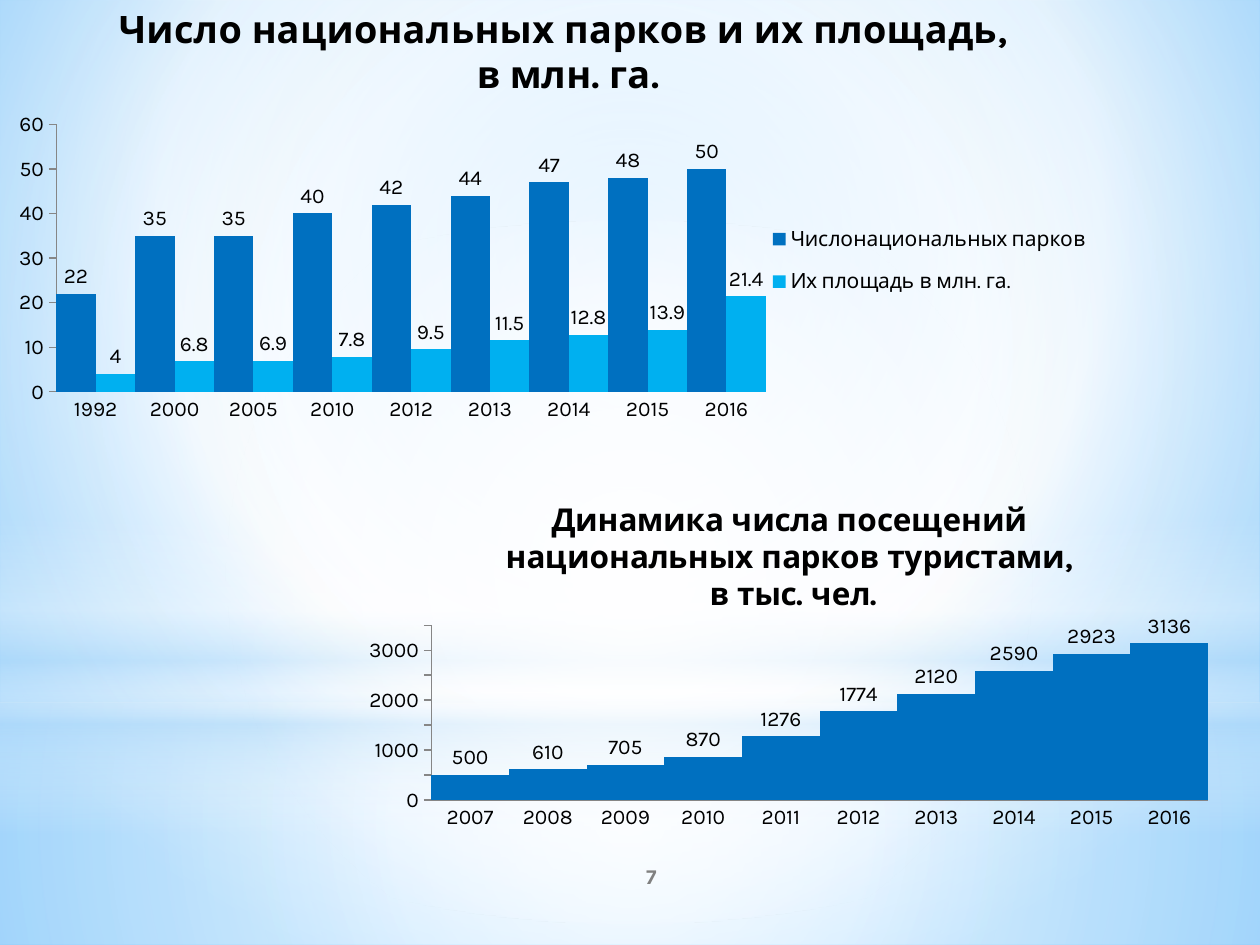
from dataclasses import dataclass

from lxml import etree
from pptx import Presentation
from pptx.chart.data import CategoryChartData
from pptx.dml.color import RGBColor
from pptx.enum.chart import XL_CHART_TYPE, XL_LABEL_POSITION, XL_LEGEND_POSITION, XL_TICK_MARK
from pptx.enum.shapes import MSO_SHAPE
from pptx.enum.text import MSO_ANCHOR, PP_ALIGN
from pptx.oxml import parse_xml
from pptx.oxml.ns import nsdecls, qn
from pptx.util import Cm, Pt

COLUMNS = XL_CHART_TYPE.COLUMN_CLUSTERED
OUTSIDE_END = XL_LABEL_POSITION.OUTSIDE_END
LEGEND_RIGHT = XL_LEGEND_POSITION.RIGHT
TICK_NONE, TICK_OUT = XL_TICK_MARK.NONE, XL_TICK_MARK.OUTSIDE
RECT, OVAL = MSO_SHAPE.RECTANGLE, MSO_SHAPE.OVAL
MIDDLE, CENTER = MSO_ANCHOR.MIDDLE, PP_ALIGN.CENTER


@dataclass(frozen=True)
class Theme:
    font: str = "Karla"
    text: str = "000000"
    muted: str = "808080"
    axis: str = "868686"
    blue: str = "0070C0"
    sky: str = "00B0F0"
    white: str = "FFFFFF"
    haze: str = "B4DCFA"
    label_size: float = 12


@dataclass(frozen=True)
class Gradient:
    stops: tuple                       # (position %, colour, opacity %)
    centre: tuple | None = (50, 50, 50, 50)  # None makes it run top to bottom


@dataclass(frozen=True)
class Glow:
    kind: int
    box: tuple
    gradient: Gradient


@dataclass(frozen=True)
class Series:
    name: str
    values: tuple
    color: str


@dataclass(frozen=True)
class ColumnChart:
    box: tuple
    title: tuple
    title_size: float
    years: tuple
    series: tuple
    top: int
    step: int
    plot: tuple                        # x, y, w, h as shares of the chart
    legend: tuple | None = None


T = Theme()

BACKDROP = Gradient(((0, "9ED5FF", 100), (60, T.white, 100), (100, "5BB9FF", 100)),
                    (20, 10, 20, 60))

GLOWS = (
    Glow(RECT, (0, 14.17, 25.4, 4.88),
         Gradient(((0, T.white, 91), (37, T.white, 76), (100, T.haze, 79)))),
    Glow(RECT, (0, 0, 25.4, 14.17),
         Gradient(((0, T.white, 89), (48, T.white, 62), (100, T.haze, 79)))),
    Glow(RECT, (0, 10.46, 25.4, 6.35),
         Gradient(((0, T.white, 0), (29, T.white, 30), (45, T.haze, 40),
                   (55, T.white, 26), (65, T.haze, 60), (100, T.white, 0)), None)),
    Glow(OVAL, (0, 4.45, 25.4, 14.17),
         Gradient(((0, T.white, 100), (56, T.white, 0)))),
)

CHARTS = (
    ColumnChart(
        box=(0, -0.28, 22.71, 8.99),
        title=("Число национальных парков и их площадь,", " в млн. га."),
        title_size=21.6,
        years=("1992", "2000", "2005", "2010", "2012", "2013", "2014", "2015", "2016"),
        series=(
            Series("Числонациональных парков",
                   (22, 35, 35, 40, 42, 44, 47, 48, 50), T.blue),
            Series("Их площадь в млн. га.",
                   (4, 6.8, 6.9, 7.8, 9.5, 11.5, 12.8, 13.9, 21.4), T.sky),
        ),
        top=60, step=10,
        plot=(0.05, 0.31, 0.63, 0.6),
        legend=(0.67, 0.5, 0.31, 0.23),
    ),
    ColumnChart(
        box=(7.11, 9.73, 17.6, 7.19),
        title=("Динамика числа посещений национальных парков туристами,", " в тыс. чел."),
        title_size=18,
        years=tuple(str(year) for year in range(2007, 2017)),
        series=(Series("Series 1", (500, 610, 705, 870, 1276, 1774, 2120, 2590, 2923, 3136),
                       T.blue),),
        top=3500, step=500,
        plot=(0.09, 0.4, 0.89, 0.49),
    ),
)


def cm_box(box: tuple) -> list:
    return [Cm(v) for v in box]


def set_font(font, size: float, color: str = T.text, bold: bool = False) -> None:
    for name, value in {"name": T.font, "size": Pt(size), "bold": bold}.items():
        setattr(font, name, value)
    font.color.rgb = RGBColor.from_string(color)


def paint(props, gradient: Gradient) -> None:
    """Swap the solid fill in the properties for a gradient."""
    grad = parse_xml(f'<a:gradFill {nsdecls("a")} rotWithShape="1"><a:gsLst/></a:gradFill>')
    for position, color, opacity in gradient.stops:
        stop = etree.SubElement(grad[0], qn("a:gs"), pos=str(position * 1000))
        rgb = etree.SubElement(stop, qn("a:srgbClr"), val=color)
        if opacity < 100:
            etree.SubElement(rgb, qn("a:alpha"), val=str(opacity * 1000))
    if gradient.centre:
        way = etree.SubElement(grad, qn("a:path"), path="circle")
        sides = {k: str(v * 1000) for k, v in zip("ltrb", gradient.centre)}
        etree.SubElement(way, qn("a:fillToRect"), sides)
    else:
        etree.SubElement(grad, qn("a:lin"), ang="5400000", scaled="0")
    props.replace(props.find(qn("a:solidFill")), grad)


def place(element, index: int, area: tuple, inner: bool = False) -> None:
    """Give a chart part a fixed place inside its chart."""
    for old in element.findall(qn("c:layout")):
        element.remove(old)
    layout = parse_xml(f'<c:layout {nsdecls("c")}><c:manualLayout/></c:layout>')
    settings = {"layoutTarget": "inner"} if inner else {}
    settings.update(xMode="edge", yMode="edge", **dict(zip("xywh", area)))
    for tag, value in settings.items():
        etree.SubElement(layout[0], qn(f"c:{tag}"), val=str(value))
    element.insert(index, layout)


def add_glow(s, glow: Glow) -> None:
    sp = s.shapes.add_shape(glow.kind, *cm_box(glow.box))
    sp.shadow.inherit = False
    sp.line.fill.background()
    sp.fill.solid()
    paint(sp.element.spPr, glow.gradient)


def add_columns(s, item: ColumnChart) -> None:
    data = CategoryChartData()
    data.categories = item.years
    for series in item.series:
        data.add_series(series.name, series.values)
    chart = s.shapes.add_chart(COLUMNS, *cm_box(item.box), data).chart
    set_font(chart.font, T.label_size)

    # Title
    tf = chart.chart_title.text_frame
    for i, line in enumerate(item.title):
        p = tf.add_paragraph() if i else tf.paragraphs[0]
        r = p.add_run()
        r.text = line
        set_font(r.font, item.title_size, bold=True)

    # Axes
    for axis, tick in ((chart.category_axis, TICK_NONE), (chart.value_axis, TICK_OUT)):
        axis.has_major_gridlines = False
        axis.major_tick_mark, axis.minor_tick_mark = tick, TICK_NONE
        axis.format.line.color.rgb = RGBColor.from_string(T.axis)
        set_font(axis.tick_labels.font, T.label_size)
    scale = {"minimum_scale": 0, "maximum_scale": item.top, "major_unit": item.step}
    for name, value in scale.items():
        setattr(chart.value_axis, name, value)

    # Columns and their values
    plot = chart.plots[0]
    plot.gap_width, plot.overlap, plot.vary_by_categories = 0, 0, False
    for series, spec_row in zip(plot.series, item.series):
        series.format.fill.solid()
        series.format.fill.fore_color.rgb = RGBColor.from_string(spec_row.color)
        labels = series.data_labels
        labels.show_value, labels.position = True, OUTSIDE_END
        set_font(labels.font, T.label_size)
    place(chart.element.chart.plotArea, 0, item.plot, inner=True)

    # Legend
    chart.has_legend = item.legend is not None
    if item.legend:
        chart.legend.position = LEGEND_RIGHT
        chart.legend.include_in_layout = False
        set_font(chart.legend.font, T.label_size)
        place(chart.element.chart.find(qn("c:legend")), 1, item.legend)


def add_page_number(s, number: int) -> None:
    tf = s.shapes.add_textbox(*cm_box((10.59, 17.15, 5.08, 1.02))).text_frame
    tf.word_wrap, tf.vertical_anchor = True, MIDDLE
    p = tf.paragraphs[0]
    p.alignment = CENTER
    r = p.add_run()
    r.text = str(number)
    set_font(r.font, T.label_size, T.muted, bold=True)


def main() -> None:
    prs = Presentation()
    prs.slide_width, prs.slide_height = Cm(25.4), Cm(19.05)
    s = prs.slides.add_slide(prs.slide_layouts[6])

    # Backdrop
    s.background.fill.solid()
    paint(s.element.find(".//" + qn("p:bgPr")), BACKDROP)
    for glow in GLOWS:
        add_glow(s, glow)

    # Content
    add_page_number(s, 7)
    for item in CHARTS:
        add_columns(s, item)
    prs.save("out.pptx")


if __name__ == "__main__":
    main()
